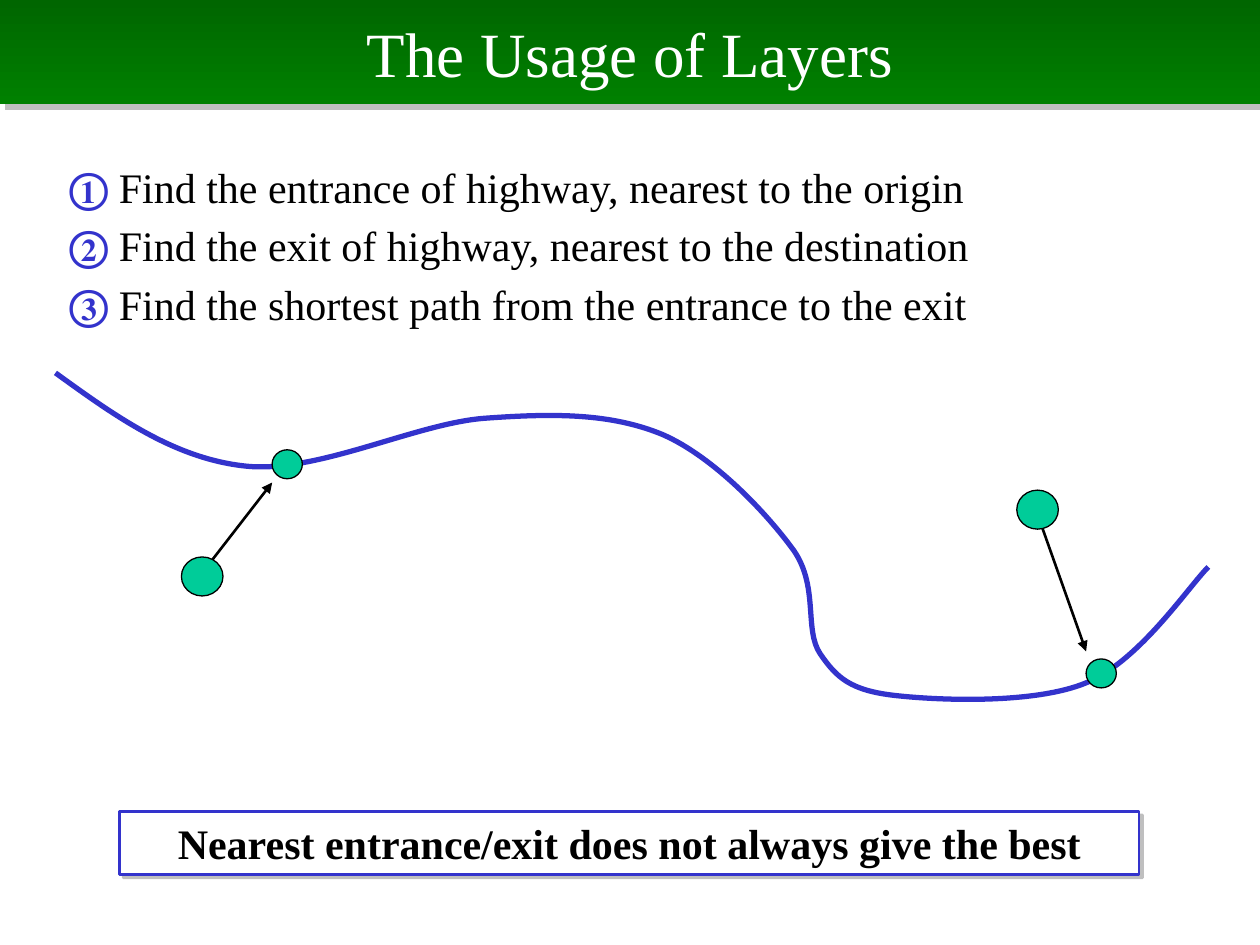
"""Build a slide on finding a route through road network layers."""
from dataclasses import dataclass

from lxml import etree
from pptx import Presentation
from pptx.dml.color import RGBColor
from pptx.enum.shapes import MSO_CONNECTOR, MSO_SHAPE
from pptx.enum.text import MSO_ANCHOR, PP_ALIGN
from pptx.oxml.ns import qn
from pptx.util import Inches, Pt

RECTANGLE, OVAL = MSO_SHAPE.RECTANGLE, MSO_SHAPE.OVAL
STRAIGHT = MSO_CONNECTOR.STRAIGHT
LEFT, CENTER = PP_ALIGN.LEFT, PP_ALIGN.CENTER
TOP, MIDDLE = MSO_ANCHOR.TOP, MSO_ANCHOR.MIDDLE


@dataclass(frozen=True)
class Theme:
    font: str = "Times New Roman"
    title_size: int = 36
    body_size: int = 24
    white: str = "FFFFFF"
    black: str = "000000"
    blue: str = "3333CC"
    teal: str = "00CC99"
    shadow: str = "808080"
    banner: tuple = ("006600", "008000")


THEME = Theme()
COLUMNS, ROWS = 1000, 750
CELL = Inches(0.01)

TITLE = "The Usage of Layers"
STEPS = [
    ("① ", "Find the entrance of highway, nearest to the origin"),
    ("② ", "Find the exit of highway, nearest to the destination"),
    ("③ ", "Find the shortest path from the entrance to the exit"),
]
CONCLUSION = "Nearest entrance/exit does not always give the best"

TITLE_BOX = (0, 0, COLUMNS, 83)
STEPS_BOX = (45, 123, 937, 204)
CONCLUSION_BOX = (95, 644, 809, 50)
HIGHWAY_START = (44, 296)
HIGHWAY_CURVES = [
    [(91, 330), (138, 364), (195, 370)],
    [(252, 376), (330, 336), (385, 332)],
    [(440, 328), (485, 328), (526, 345)],
    [(567, 363), (609, 408), (630, 437)],
    [(650, 466), (638, 500), (651, 519)],
    [(664, 538), (675, 548), (710, 552)],
    [(745, 556), (821, 559), (862, 542)],
    [(904, 525), (943, 466), (959, 450)],
]
JUNCTION_SIZE, PLACE_SIZE = (24, 23), (33, 31)
JUNCTIONS = [(216, 357), (862, 523)]
TRIPS = [
    {"place": (144, 442), "from": (161, 454), "to": (216, 383)},
    {"place": (807, 389), "from": (823, 407), "to": (862, 517)},
]


def cells(values):
    return [value * CELL for value in values]


def color(value):
    return RGBColor.from_string(value)


def set_line(shape, value, width):
    shape.line.color.rgb = color(value)
    shape.line.width = Pt(width)


def add_preset(slide, kind, box, fill):
    shape = slide.shapes.add_shape(kind, *cells(box))
    shape.shadow.inherit = False
    shape.fill.solid()
    shape.fill.fore_color.rgb = color(fill)
    return shape


def add_dot(slide, corner, size):
    set_line(add_preset(slide, OVAL, corner + size, THEME.teal), THEME.black, 0.75)


def cast_shadow(shape, distance):
    effects = shape._element.spPr.find(qn("a:effectLst"))
    shadow = etree.SubElement(effects, qn("a:outerShdw"), dist=str(Pt(distance)),
                              dir="2700000", algn="ctr", rotWithShape="0")
    tone = etree.SubElement(shadow, qn("a:srgbClr"), val=THEME.shadow)
    etree.SubElement(tone, qn("a:alpha"), val="50000")


def write(shape, paragraphs, size, alignment, anchor, hanging=0):
    frame = shape.text_frame
    frame.word_wrap = True
    frame.vertical_anchor = anchor
    for index, runs in enumerate(paragraphs):
        paragraph = frame.add_paragraph() if index else frame.paragraphs[0]
        paragraph.alignment = alignment
        if index:
            paragraph.space_before = Pt(0.2 * size)
        if hanging:
            properties = paragraph._p.get_or_add_pPr()
            properties.set("marL", str(hanging * CELL))
            properties.set("indent", str(-hanging * CELL))
        for text, tone, bold in runs:
            run = paragraph.add_run()
            run.text = text
            run.font.name = THEME.font
            run.font.size = Pt(size)
            run.font.bold = bold
            run.font.color.rgb = color(tone)


def add_title(slide):
    banner = add_preset(slide, RECTANGLE, TITLE_BOX, THEME.banner[0])
    banner.line.fill.background()
    banner.fill.gradient()
    banner.fill.gradient_angle = 270
    for position, (stop, tone) in enumerate(zip(banner.fill.gradient_stops, THEME.banner)):
        stop.position = position
        stop.color.rgb = color(tone)
    cast_shadow(banner, 4.2)
    write(banner, [[(TITLE, THEME.white, False)]], THEME.title_size, CENTER, MIDDLE)


def add_steps(slide):
    box = slide.shapes.add_textbox(*cells(STEPS_BOX))
    paragraphs = [[(number, THEME.blue, True), (text, THEME.black, False)]
                  for number, text in STEPS]
    write(box, paragraphs, THEME.body_size, LEFT, TOP, hanging=38)


def add_highway(slide):
    builder = slide.shapes.build_freeform(*HIGHWAY_START, scale=CELL)
    builder.add_line_segments(sum(HIGHWAY_CURVES, []), close=False)
    highway = builder.convert_to_shape()
    highway.shadow.inherit = False
    highway.fill.background()
    set_line(highway, THEME.blue, 3)
    outline = highway._element.find(".//" + qn("a:path"))
    segments = outline.findall(qn("a:lnTo"))
    for start in range(0, len(segments), 3):
        curve = etree.SubElement(outline, qn("a:cubicBezTo"))
        for segment in segments[start:start + 3]:
            curve.append(segment[0])
            outline.remove(segment)


def add_arrow(slide, start, end):
    arrow = slide.shapes.add_connector(STRAIGHT, *cells(start + end))
    set_line(arrow, THEME.black, 1.5)
    etree.SubElement(arrow.line._get_or_add_ln(), qn("a:tailEnd"), type="triangle")
    etree.SubElement(arrow._element.spPr, qn("a:effectLst"))


def add_conclusion(slide):
    box = add_preset(slide, RECTANGLE, CONCLUSION_BOX, THEME.white)
    set_line(box, THEME.blue, 1.5)
    cast_shadow(box, 2.8)
    write(box, [[(CONCLUSION, THEME.black, True)]], THEME.body_size, CENTER, MIDDLE)


def main():
    presentation = Presentation()
    presentation.slide_width, presentation.slide_height = cells((COLUMNS, ROWS))
    slide = presentation.slides.add_slide(presentation.slide_layouts[6])
    add_title(slide)
    add_steps(slide)
    add_highway(slide)
    for corner in JUNCTIONS:
        add_dot(slide, corner, JUNCTION_SIZE)
    add_conclusion(slide)
    for trip in TRIPS:
        add_arrow(slide, trip["from"], trip["to"])
        add_dot(slide, trip["place"], PLACE_SIZE)
    presentation.save("out.pptx")


if __name__ == "__main__":
    main()
